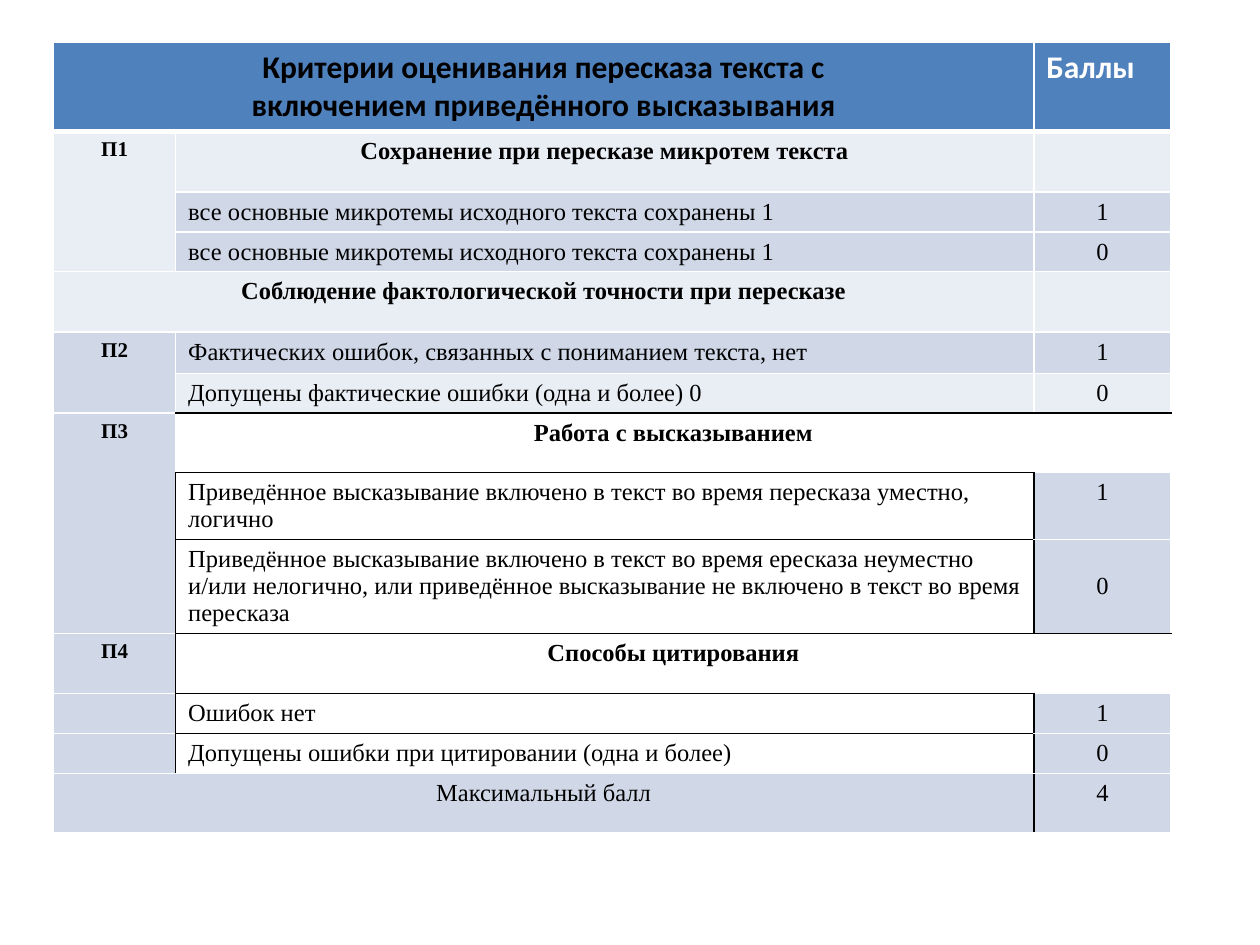
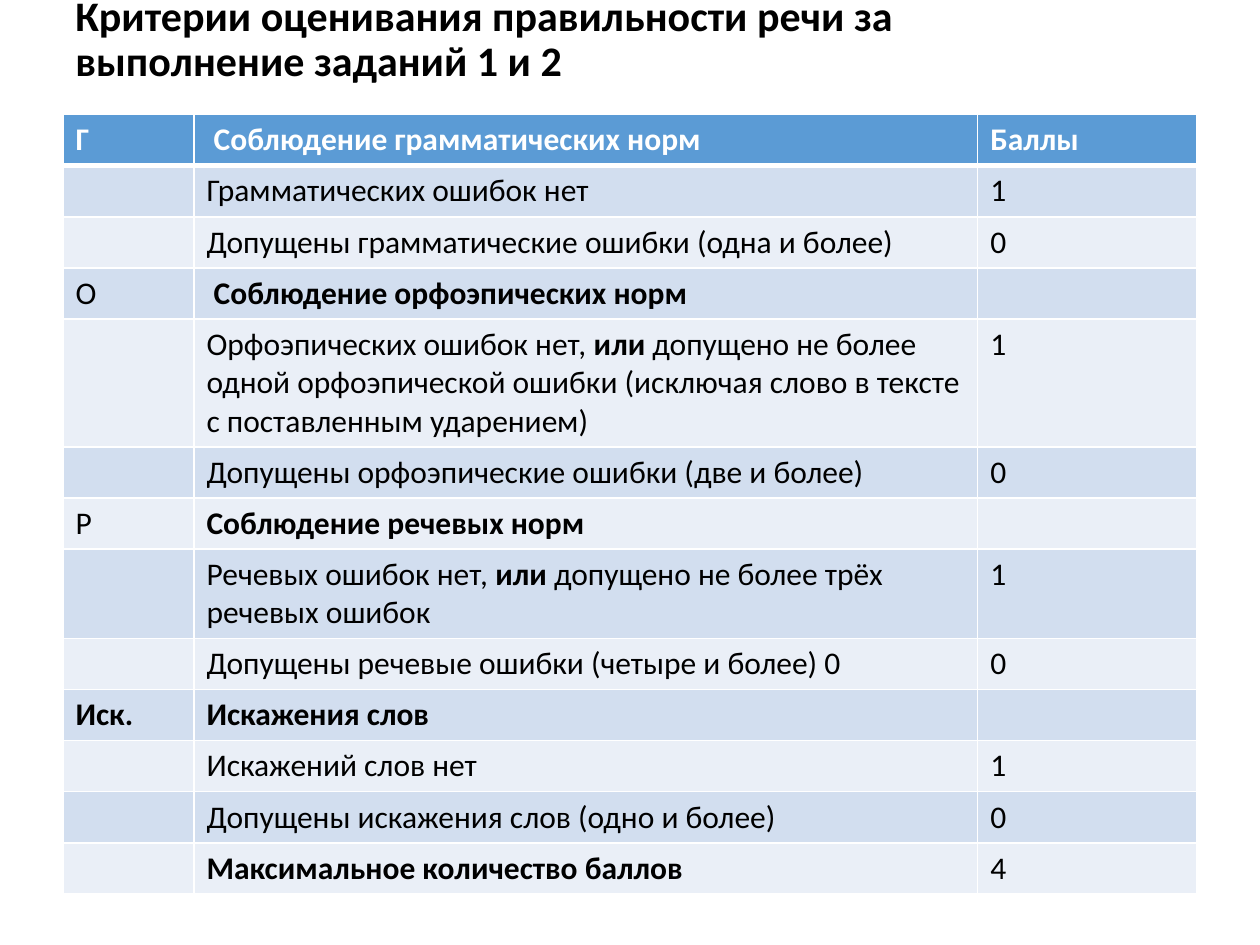
from lxml import etree
from pptx import Presentation
from pptx import util as u
from pptx.dml.color import RGBColor
from pptx.enum import text
from pptx.oxml.ns import qn

C = {"black": "000000", "white": "FFFFFF",
     "head1": "4F81BD", "light1": "E9EDF4", "dark1": "D0D8E8",
     "head2": "5B9BD5", "light2": "EAEFF7", "dark2": "D2DEEF"}
SANS, SERIF = "Calibri", "Times New Roman"
CENTER = text.PP_ALIGN.CENTER
LEFT = text.PP_ALIGN.LEFT


def add_grid(s, left, top, widths, heights):
    gf = s.shapes.add_table(len(heights), len(widths), u.Cm(left), u.Cm(top),
                            u.Cm(sum(widths)), u.Cm(sum(heights)))
    tbl = gf.table
    tbl.horz_banding = False
    for col, w in zip(tbl.columns, widths):
        col.width = u.Cm(w)
    for row, h in zip(tbl.rows, heights):
        row.height = u.Cm(h)
    return tbl


def style_cell(cell, words, fill, font, size, color, bold, align, edges):
    tcPr = cell._tc.get_or_add_tcPr()
    for side, (line, width) in zip("LRTB", edges):
        ln = etree.SubElement(tcPr, qn("a:ln" + side), w=str(u.Pt(width)))
        sf = etree.SubElement(ln, qn("a:solidFill"))
        etree.SubElement(sf, qn("a:srgbClr"), val=C[line])
    cell.fill.solid()
    cell.fill.fore_color.rgb = RGBColor.from_string(C[fill])
    p = cell.text_frame.paragraphs[0]
    p.alignment = align
    p.font.name, p.font.size, p.font.bold = font, u.Pt(size), bold
    p.font.color.rgb = RGBColor.from_string(C[color])
    parts = words.split("**")
    if len(parts) == 1:
        p.text = words
    else:
        for i, part in enumerate(parts):
            r = p.add_run()
            r.text = part
            r.font.bold = i % 2 == 1


prs = Presentation()
prs.slide_width, prs.slide_height = u.Cm(25.4), u.Cm(19.05)
blank = prs.slide_layouts[6]

s = prs.slides.add_slide(blank)
retelling = [
    ("Критерии оценивания пересказа текста с\vвключением приведённого высказывания", "", "Баллы"),
    ("П1", "Сохранение при пересказе микротем текста", ""),
    ("", "все основные микротемы исходного текста сохранены 1", "1"),
    ("", "все основные микротемы исходного текста сохранены 1", "0"),
    ("Соблюдение фактологической точности при пересказе", "", ""),
    ("П2", "Фактических ошибок, связанных с пониманием текста, нет", "1"),
    ("", "Допущены фактические ошибки (одна и более) 0", "0"),
    ("П3", "Работа с высказыванием", ""),
    ("", "Приведённое высказывание включено в текст во время пересказа уместно, логично", "1"),
    ("", "Приведённое высказывание включено в текст во время ересказа неуместно и/или нелогично, "
         "или приведённое высказывание не включено в текст во время пересказа", "0"),
    ("П4", "Способы цитирования", ""),
    ("", "Ошибок нет", "1"),
    ("", "Допущены ошибки при цитировании (одна и более)", "0"),
    ("Максимальный балл", "", "4"),
]
heights = [1.8, 1.22, 0.8, 0.8, 1.22, 0.83, 0.8, 1.2, 1.34, 1.88, 1.21, 0.81, 0.79, 1.2]
tbl = add_grid(s, 1.08, 0.85, [2.46, 17.3, 2.77], heights)
for r1, c1, r2, c2 in [(0, 0, 0, 1), (1, 0, 3, 0), (4, 0, 4, 1), (5, 0, 6, 0),
                       (7, 0, 9, 0), (7, 1, 7, 2), (10, 1, 10, 2), (13, 0, 13, 1)]:
    tbl.cell(r1, c1).merge(tbl.cell(r2, c2))

black_rows = {(7, 1), (7, 2), (8, 1), (9, 1), (10, 1), (10, 2), (11, 1), (12, 1)}
black_cols = {(r, 1) for r in range(8, 13)} | {(r, 2) for r in (8, 9, 11, 12, 13)}
headings = (1, 4, 7, 10)
for r, row in enumerate(retelling):
    for c, words in enumerate(row):
        cell = tbl.cell(r, c)
        right = c + (cell.span_width if cell.is_merge_origin else 1)
        bottom = r + (cell.span_height if cell.is_merge_origin else 1)
        edges = [("black" if key in lines else "white", 3 if lines is black_rows and key[0] == 1 else 1)
                 for key, lines in [((r, c), black_cols), ((r, right), black_cols),
                                    ((r, c), black_rows), ((bottom, c), black_rows)]]
        if r == 0:
            style_cell(cell, words, "head1", SANS, 18, "white" if c == 2 else "black", True,
                       LEFT if c == 2 else CENTER, edges)
            continue
        if c == 1 and 7 <= r <= 12 or c == 2 and r in (7, 10):
            fill = "white"
        elif r in (1, 4) or r == 6 and c > 0:
            fill = "light1"
        else:
            fill = "dark1"
        label = c == 0 and r not in (4, 13)
        bold = label or r in headings
        align = LEFT if c == 1 and r not in headings else CENTER
        style_cell(cell, words, fill, SERIF, 12 if label else 14, "black", bold, align, edges)
tbl.cell(9, 2).vertical_anchor = text.MSO_ANCHOR.MIDDLE

s = prs.slides.add_slide(blank)
tf = s.shapes.add_textbox(u.Cm(1.27), u.Cm(0.76), u.Cm(22.86), u.Cm(0.97)).text_frame
tf.word_wrap = True
tf.vertical_anchor = text.MSO_ANCHOR.BOTTOM
tf.margin_bottom = 0
p = tf.paragraphs[0]
p.text = "Критерии оценивания правильности речи за\vвыполнение заданий 1 и 2"
p.line_spacing = 0.9
p.font.name, p.font.size, p.font.bold = SANS, u.Pt(24), True
p.font.color.rgb = RGBColor.from_string(C["black"])

speech = [
    ("Г", " Соблюдение грамматических норм", "Баллы"),
    ("", "Грамматических ошибок нет", "1"),
    ("", "Допущены грамматические ошибки (одна и более)", "0"),
    ("О", " Соблюдение орфоэпических норм", ""),
    ("", "Орфоэпических ошибок нет, **или **допущено не более одной орфоэпической ошибки "
         "(исключая слово в тексте с поставленным ударением)", "1"),
    ("", "Допущены орфоэпические ошибки (две и более)", "0"),
    ("Р", "Соблюдение речевых норм", ""),
    ("", "Речевых ошибок нет, **или **допущено не более трёх речевых ошибок", "1"),
    ("", "Допущены речевые ошибки (четыре и более) 0", "0"),
    ("Иск.", "Искажения слов", ""),
    ("", "Искажений слов нет", "1"),
    ("", "Допущены искажения слов (одно и более)", "0"),
    ("", "Максимальное количество баллов", "4"),
]
heights = [{4: 2.58, 7: 1.8}.get(r, 1.03) for r in range(len(speech))]
tbl = add_grid(s, 1.27, 2.31, [2.64, 15.8, 4.42], heights)
for r, row in enumerate(speech):
    fill = "head2" if r == 0 else ("light2", "dark2")[r % 2]
    edges = [("white", 1), ("white", 1), ("white", 3 if r == 1 else 1), ("white", 3 if r == 0 else 1)]
    for c, words in enumerate(row):
        bold = r == 0 or words == "Иск." or c == 1 and r in (3, 6, 9, 12)
        style_cell(tbl.cell(r, c), words, fill, SANS, 18, "white" if r == 0 else "black",
                   bold, LEFT, edges)

prs.save("out.pptx")
